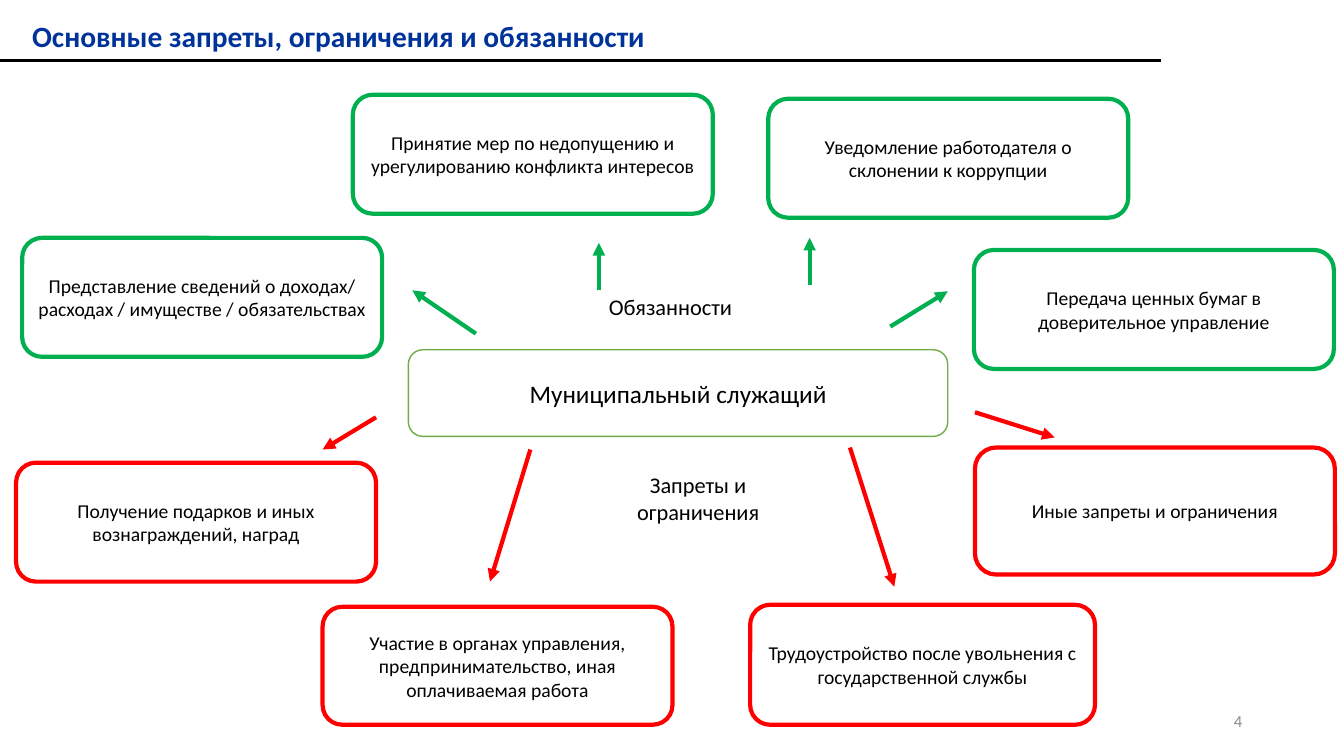
from lxml import etree
from pptx import Presentation
from pptx import util as u
from pptx.dml.color import RGBColor
from pptx.enum import shapes, text
from pptx.oxml.ns import qn

FONT = "Calibri"
BLACK, WHITE, NAVY, GREY = "000000", "FFFFFF", "003399", "8C8C8C"
DUTY, BAN, CENTRE = "00B050", "FF0000", "70AD47"

# Left, top, width, height, wording
DUTIES = [
    (0.22, 2.36, 3.57, 1.18, "Представление сведений о доходах/ расходах / имуществе / обязательствах"),
    (3.5, 0.94, 3.57, 1.18, "Принятие мер по недопущению и урегулированию конфликта интересов"),
    (7.62, 0.98, 3.57, 1.18, "Уведомление работодателя о склонении к коррупции"),
    (9.66, 2.48, 3.57, 1.18, "Передача ценных бумаг в доверительное управление"),
]
BANS = [
    (0.16, 4.59, 3.57, 1.18, "Получение подарков и иных вознаграждений, наград"),
    (3.2, 6.02, 3.47, 1.17, "Участие в органах управления, предпринимательство, иная оплачиваемая работа"),
    (7.44, 6, 3.42, 1.19, "Трудоустройство после увольнения с государственной службы"),
    (9.67, 4.44, 3.57, 1.26, "Иные запреты и ограничения"),
]

# Start x, start y, end x, end y
DUTY_ARROWS = [
    (4.72, 3.31, 4.09, 2.88),
    (5.94, 2.88, 5.94, 2.41),
    (8.03, 2.83, 8.03, 2.36),
    (8.83, 3.24, 9.4, 2.89),
]
BAN_ARROWS = [
    (3.73, 4.14, 3.2, 4.46),
    (5.26, 4.46, 4.86, 5.77),
    (8.43, 4.44, 8.87, 5.82),
    (9.67, 4.09, 10.46, 4.34),
]


def rgb(value):
    return RGBColor.from_string(value)


def write(shape, wording, size, color=BLACK, align=text.PP_ALIGN.CENTER, bold=False):
    frame = shape.text_frame
    frame.text = wording
    for para in frame.paragraphs:
        para.alignment = align
        for span in para.runs:
            span.font.name = FONT
            span.font.size = u.Pt(size)
            span.font.bold = bold
            span.font.color.rgb = rgb(color)


def add_label(page, left, top, width, height, wording, size, wrap=False, **style):
    box = page.shapes.add_textbox(*map(u.Inches, (left, top, width, height)))
    box.text_frame.word_wrap = wrap
    write(box, wording, size, **style)
    return box


def add_card(page, left, top, width, height, wording, size, color, weight):
    card = page.shapes.add_shape(
        shapes.MSO_SHAPE.ROUNDED_RECTANGLE, *map(u.Inches, (left, top, width, height)))
    card.shadow.inherit = False
    card.fill.solid()
    card.fill.fore_color.rgb = rgb(WHITE)
    card.line.color.rgb = rgb(color)
    card.line.width = u.Pt(weight)
    card.text_frame.word_wrap = True
    card.text_frame.vertical_anchor = text.MSO_ANCHOR.MIDDLE
    write(card, wording, size)


def add_line(page, ends, color, weight, arrow=False):
    line = page.shapes.add_connector(
        shapes.MSO_CONNECTOR.STRAIGHT, *map(u.Inches, ends))
    line.line.color.rgb = rgb(color)
    line.line.width = u.Pt(weight)
    if arrow:
        etree.SubElement(line.line._get_or_add_ln(), qn("a:tailEnd"), type="triangle")
    etree.SubElement(line._element.spPr, qn("a:effectLst"))


def main():
    deck = Presentation()
    deck.slide_width, deck.slide_height = u.Inches(13.33), u.Inches(7.5)
    page = deck.slides.add_slide(deck.slide_layouts[6])

    # Heading and page number
    add_label(page, 0.22, 0.13, 6.35, 0.45, "Основные запреты, ограничения и обязанности",
              21, color=NAVY, align=text.PP_ALIGN.LEFT, bold=True)
    add_line(page, (0, 0.6, 11.52, 0.6), BLACK, 1.5)
    number = add_label(page, 9.42, 6.95, 3, 0.4, "4", 12, wrap=True,
                       color=GREY, align=text.PP_ALIGN.RIGHT)
    number.text_frame.vertical_anchor = text.MSO_ANCHOR.MIDDLE

    # Centre of the scheme
    add_card(page, 4.05, 3.47, 5.35, 0.86, "Муниципальный служащий", 18, CENTRE, 1)
    add_label(page, 5.94, 2.86, 1.44, 0.37, "Обязанности", 16, align=text.PP_ALIGN.LEFT)
    add_label(page, 6.21, 4.63, 1.43, 0.64, "Запреты и\nограничения", 16)

    # Duties above, bans below
    for cards, arrows, color in ((DUTIES, DUTY_ARROWS, DUTY), (BANS, BAN_ARROWS, BAN)):
        for *place, wording in cards:
            add_card(page, *place, wording, 14, color, 3)
        for ends in arrows:
            add_line(page, ends, color, 3, arrow=True)

    deck.save("out.pptx")


if __name__ == "__main__":
    main()
